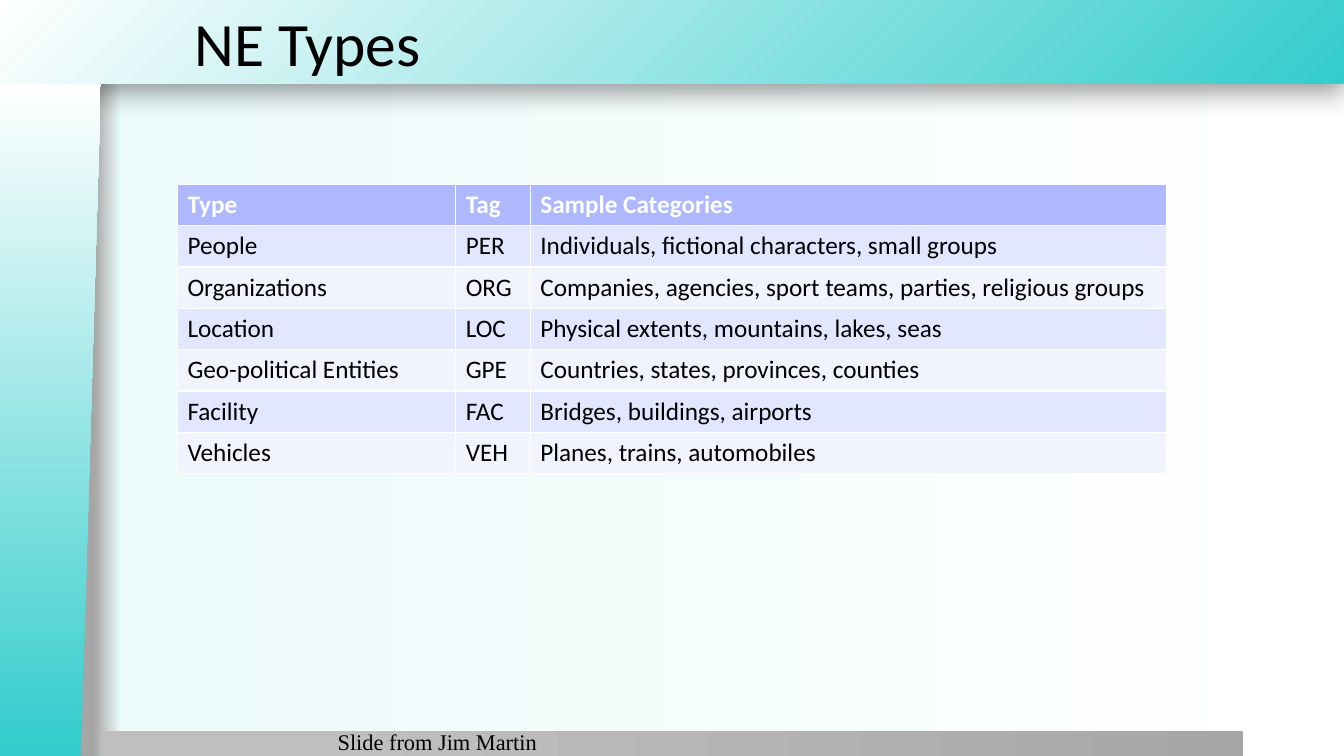
from pptx import Presentation
from pptx.dml.color import RGBColor
from pptx.enum import shapes, text
from pptx.oxml import parse_xml
from pptx.oxml.ns import nsdecls, qn
from pptx.util import Inches, Pt

# Content
TITLE = "NE Types"
CREDIT = "Slide from Jim Martin"
ENTITY_ROWS = [
    ("Type", "Tag", "Sample Categories"),
    ("People", "PER", "Individuals, fictional characters, small groups"),
    ("Organizations", "ORG", "Companies, agencies, sport teams, parties, religious groups"),
    ("Location", "LOC", "Physical extents, mountains, lakes, seas"),
    ("Geo-political Entities", "GPE", "Countries, states, provinces, counties"),
    ("Facility", "FAC", "Bridges, buildings, airports"),
    ("Vehicles", "VEH", "Planes, trains, automobiles"),
]
COLUMN_WIDTHS = (2.76, 0.74, 6.31)
ROW_HEIGHT = 0.41
COLORS = {
    "teal": "34CCCC", "mist": "EDFBFB", "white": "FFFFFF", "black": "000000",
    "edge": "A6A6A6", "bar_light": "BFBFBF", "bar_dark": "A7A7A7",
    "header": "ADB8FF", "odd": "E3E6FF", "even": "F1F3FF",
}
LINEAR = '<a:lin ang="0" scaled="0"/>'
FROM_CORNER = '<a:path path="circle"><a:fillToRect l="100000" t="100000"/></a:path>'


def color(name):
    return RGBColor.from_string(COLORS[name])


def set_gradient(fill, element, stops, direction=LINEAR):
    """Fill with (percent, color name) stops."""
    fill.gradient()
    stop_xml = "".join(
        f'<a:gs pos="{percent * 1000}"><a:srgbClr val="{COLORS[name]}"/></a:gs>'
        for percent, name in stops)
    gradient = element.find(".//" + qn("a:gradFill"))
    gradient.getparent().replace(gradient, parse_xml(
        f'<a:gradFill {nsdecls("a")} rotWithShape="1">'
        f"<a:gsLst>{stop_xml}</a:gsLst>{direction}</a:gradFill>"))


def add_panel(slide, preset, box, stops, direction=LINEAR):
    shape = slide.shapes.add_shape(preset, *map(Inches, box))
    shape.shadow.inherit = False
    shape.line.fill.background()
    set_gradient(shape.fill, shape.element, stops, direction)
    return shape


def format_text(paragraph, size, font_name, color_name, bold=False):
    paragraph.font.size = Pt(size)
    paragraph.font.name = font_name
    paragraph.font.bold = bold
    paragraph.font.color.rgb = color(color_name)


presentation = Presentation()
presentation.slide_width, presentation.slide_height = Inches(13.33), Inches(7.5)
slide = presentation.slides.add_slide(presentation.slide_layouts[5])

# Background
set_gradient(slide.background.fill, slide.element,
             [(7, "edge"), (9, "mist"), (100, "white")])

# Top band with shadow, bottom bar, slanted side panel
teal_fade = [(0, "teal"), (100, "white")]
band = add_panel(slide, shapes.MSO_SHAPE.RECTANGLE, (-0.01, 0, 13.34, 0.83),
                 teal_fade, FROM_CORNER)
band.element.spPr.find(qn("a:effectLst")).append(parse_xml(
    f'<a:outerShdw {nsdecls("a")} blurRad="{Pt(20)}" dist="{Pt(6)}" dir="5400000">'
    f'<a:srgbClr val="{COLORS["black"]}"><a:alpha val="40000"/></a:srgbClr></a:outerShdw>'))
add_panel(slide, shapes.MSO_SHAPE.RECTANGLE, (1, 7.25, 11.33, 0.26),
          [(20, "bar_light"), (100, "bar_dark")])
side = add_panel(slide, shapes.MSO_SHAPE.FLOWCHART_MANUAL_INPUT,
                 (-2.84, 3.67, 6.68, 1), [(1, "teal"), (100, "white")])
side.rotation = 270
side.element.spPr.xfrm.set("flipV", "1")

# Title, brought in front of the band
title = slide.shapes.title
title.left, title.top, title.width, title.height = map(Inches, (1.83, 0, 11.51, 0.83))
title.text_frame.text = TITLE
title.text_frame.vertical_anchor = text.MSO_ANCHOR.MIDDLE
title.text_frame.paragraphs[0].alignment = text.PP_ALIGN.LEFT
format_text(title.text_frame.paragraphs[0], 44, "Calibri", "black")
side.element.addnext(title.element)

# Credit
credit = slide.shapes.add_textbox(*map(Inches, (3.25, 7.17, 2.58, 0.33)))
credit.text_frame.word_wrap = True
credit.text_frame.text = CREDIT
format_text(credit.text_frame.paragraphs[0], 16, "Times New Roman", "black")

# Entity table
table = slide.shapes.add_table(
    len(ENTITY_ROWS), len(COLUMN_WIDTHS), Inches(1.76), Inches(1.83),
    Inches(sum(COLUMN_WIDTHS)), Inches(ROW_HEIGHT * len(ENTITY_ROWS))).table
for column, width in zip(table.columns, COLUMN_WIDTHS):
    column.width = Inches(width)
for row_index, values in enumerate(ENTITY_ROWS):
    is_header = row_index == 0
    fill_name = "header" if is_header else ("even", "odd")[row_index % 2]
    for cell, value in zip(table.rows[row_index].cells, values):
        cell.text = value
        cell.fill.solid()
        cell.fill.fore_color.rgb = color(fill_name)
        format_text(cell.text_frame.paragraphs[0], 18, "Calibri",
                    "white" if is_header else "black", bold=is_header)

presentation.save("out.pptx")
